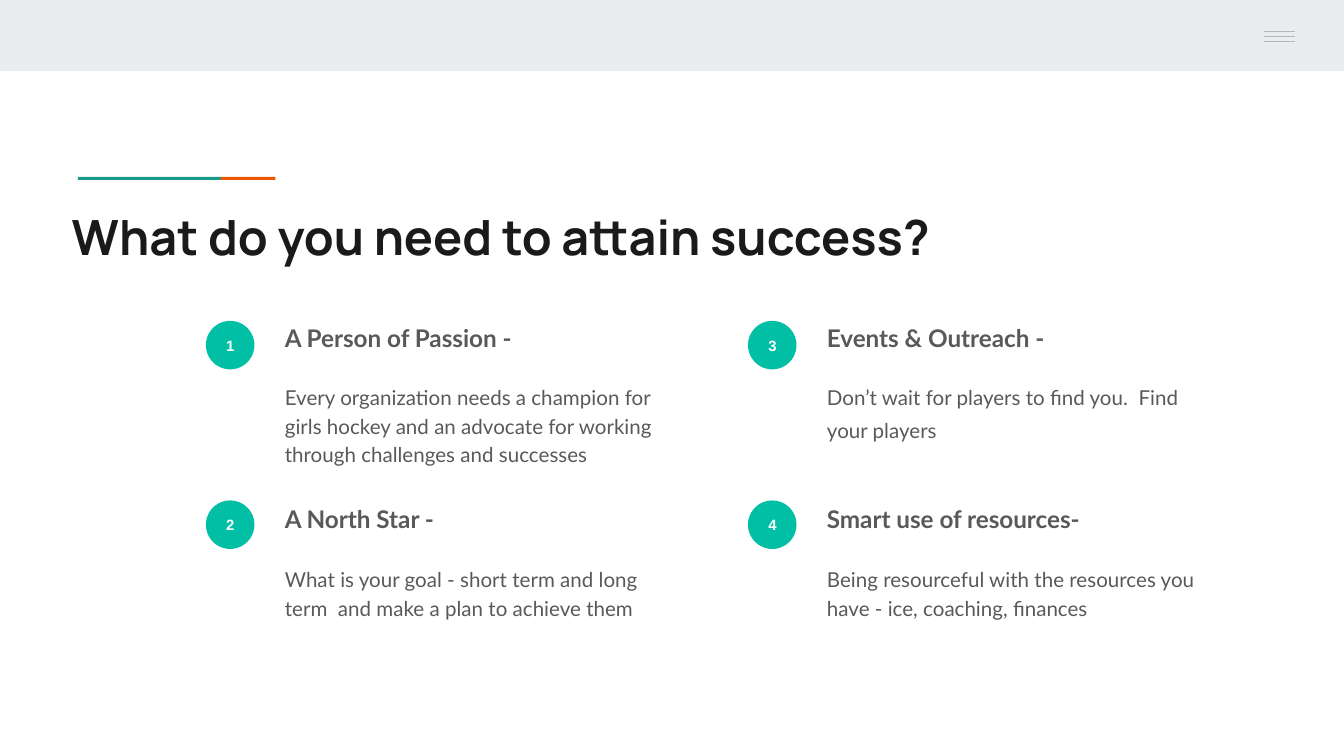
from dataclasses import dataclass

from lxml.etree import SubElement
from pptx import Presentation
from pptx.dml.color import RGBColor
from pptx.enum.shapes import MSO_CONNECTOR, MSO_SHAPE
from pptx.enum.text import MSO_ANCHOR, MSO_AUTO_SIZE, PP_ALIGN
from pptx.oxml.ns import qn
from pptx.util import Pt


@dataclass(frozen=True)
class Theme:
    band: str = "E9EDEE"
    teal: str = "1A9988"
    orange: str = "EB5600"
    menu: str = "B7B7B7"
    ink: str = "1A1A1A"
    body: str = "595959"
    badge: str = "00BFA5"
    white: str = "FFFFFF"
    title_size: float = 26
    head_size: float = 13
    body_size: float = 11
    badge_size: float = 8


@dataclass(frozen=True)
class Point:
    head: str
    text: str
    height: float = 82.8
    lead: float = 1.15
    gap: float = 16


THEME = Theme()
POINTS = [
    Point("A Person of Passion -",
          "Every organization needs a champion for girls hockey and an "
          "advocate for working through challenges and successes", height=93.6),
    Point("A North Star -",
          "What is your goal - short term and long term  and make a plan "
          "to achieve them"),
    Point("Events & Outreach -",
          "Don’t wait for players to find you.  Find your players",
          lead=1.33, gap=13.6),
    Point("Smart use of resources-",
          "Being resourceful with the resources you have - ice, coaching, "
          "finances"),
]
ROWS = 2
COL_STEP = 290.4


def color(code):
    return RGBColor.from_string(code)


def style(par, face, size, code, bold=False):
    font = par.font
    font.name, font.size, font.bold = face, Pt(size), bold
    font.color.rgb = color(code)


def place(shape, left, top, width, height):
    shape.left, shape.top = Pt(left), Pt(top)
    shape.width, shape.height = Pt(width), Pt(height)


def set_frame(frame, anchor):
    frame.margin_left = frame.margin_right = Pt(7.2)
    frame.margin_top = frame.margin_bottom = Pt(7.2)
    frame.word_wrap = True
    frame.auto_size = MSO_AUTO_SIZE.NONE
    frame.vertical_anchor = anchor


def add_fill(slide, kind, left, top, width, height, code):
    """Add a preset shape with a plain fill and no outline."""
    shape = slide.shapes.add_shape(
        kind, Pt(left), Pt(top), Pt(width), Pt(height))
    shape.shadow.inherit = False
    shape.fill.solid()
    shape.fill.fore_color.rgb = color(code)
    shape.line.fill.background()
    return shape


def add_menu(slide):
    """Add the three thin lines at the right end of the band."""
    for row in range(3):
        y = Pt(16.8 + 2.7 * row)
        line = slide.shapes.add_connector(
            MSO_CONNECTOR.STRAIGHT, Pt(677), y, Pt(694), y)
        line.line.color.rgb = color(THEME.menu)
        line.line.width = Pt(0.75)
        SubElement(line._element.spPr, qn("a:effectLst"))


def set_title(title, text):
    place(title, 31.2, 103.7, 631.4, 42.5)
    set_frame(title.text_frame, MSO_ANCHOR.TOP)
    title.text_frame.text = text
    par = title.text_frame.paragraphs[0]
    par.alignment = PP_ALIGN.LEFT
    style(par, "Manrope", THEME.title_size, THEME.ink, True)


def add_badge(slide, left, top, number):
    badge = add_fill(slide, MSO_SHAPE.OVAL, left, top, 26, 26, THEME.badge)
    set_frame(badge.text_frame, MSO_ANCHOR.MIDDLE)
    badge.text_frame.text = str(number)
    par = badge.text_frame.paragraphs[0]
    par.alignment = PP_ALIGN.CENTER
    style(par, "Arial", THEME.badge_size, THEME.white, True)


def add_line(par, text, size, bold, lead, gap):
    """Fill a body paragraph without bullet or indent."""
    par.text = text
    props = par._p.get_or_add_pPr()
    props.set("marL", "0")
    props.set("indent", "0")
    par.line_spacing = lead
    par.space_before, par.space_after = Pt(gap), Pt(0)
    SubElement(props, qn("a:buNone"))
    style(par, "Lato", size, THEME.body, bold)


def set_point(holder, point, left, top):
    place(holder, left, top, 223.2, point.height)
    frame = holder.text_frame
    set_frame(frame, MSO_ANCHOR.TOP)
    add_line(frame.paragraphs[0], point.head, THEME.head_size, True, 1.15, 0)
    add_line(frame.add_paragraph(), point.text, THEME.body_size, False,
             point.lead, point.gap)


def main():
    deck = Presentation()
    deck.slide_width, deck.slide_height = Pt(720), Pt(405)
    slide = deck.slides.add_slide(deck.slide_layouts.get_by_name("Comparison"))
    title, *bodies = slide.placeholders

    add_fill(slide, MSO_SHAPE.RECTANGLE, 0, 0, 720, 38.2, THEME.band)
    add_fill(slide, MSO_SHAPE.RECTANGLE, 41.8, 94.8, 76.6, 1.6, THEME.teal)
    add_fill(slide, MSO_SHAPE.RECTANGLE, 118.4, 94.8, 29.2, 1.6, THEME.orange)
    add_menu(slide)
    set_title(title, "What do you need to attain success?")

    for index, (holder, point) in enumerate(zip(bodies, POINTS)):
        col, row = divmod(index, ROWS)
        left = 110.3 + COL_STEP * col
        add_badge(slide, left, 171.9 + 96.2 * row, index + 1)
        set_point(holder, point, left + 35.1, 163.4 + 97.4 * row)

    deck.save("out.pptx")


if __name__ == "__main__":
    main()
